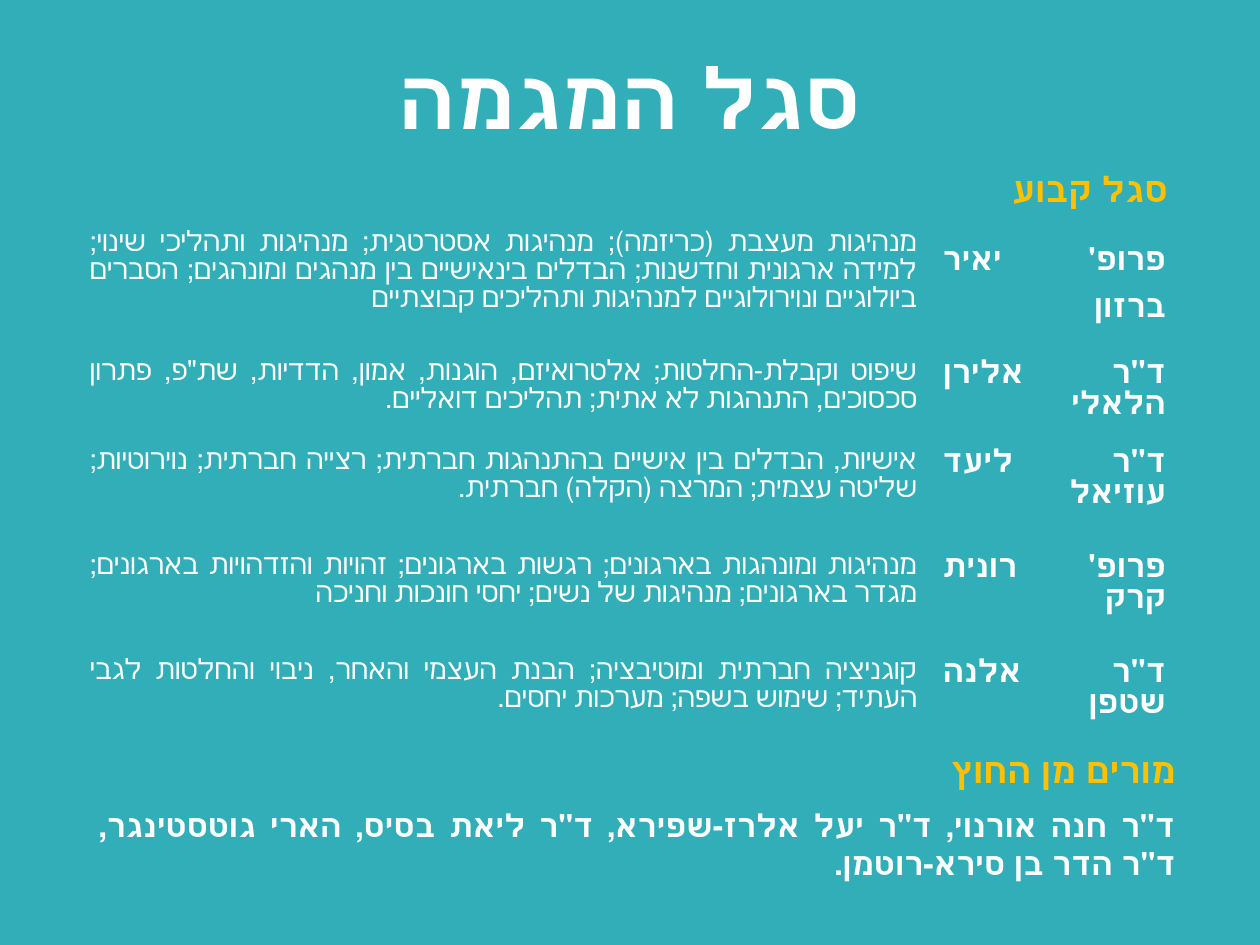
from pptx import Presentation
from pptx.dml.color import RGBColor
from pptx.enum import text
from pptx.oxml import ns
from pptx.util import Pt

COLORS = {"background": "32AEB8", "body": "FFFFFF", "heading": "FFC000"}
FONT = "Arial"
NO_STYLE = "{2D5ABB26-0587-4C30-8999-92F81FD0307C}"
COLUMN_WIDTHS = [487.5, 142]
ROW_HEIGHTS = [73.5, 51, 60, 60, 65]
NAME_SPACING = [1.5, None, None, None, None]
STAFF = [
    ("פרופ' יאיר ברזון",
     "מנהיגות מעצבת (כריזמה); מנהיגות אסטרטגית; מנהיגות ותהליכי שינוי; "
     "למידה ארגונית וחדשנות; הבדלים בינאישיים בין מנהגים ומונהגים; "
     "הסברים ביולוגיים ונוירולוגיים למנהיגות ותהליכים קבוצתיים"),
    ('ד"ר אלירן הלאלי',
     "שיפוט וקבלת-החלטות; אלטרואיזם, הוגנות, אמון, הדדיות, שת\"פ, פתרון "
     "סכסוכים, התנהגות לא אתית; תהליכים דואליים."),
    ('ד"ר ליעד עוזיאל',
     "אישיות, הבדלים בין אישיים בהתנהגות חברתית; רצייה חברתית; נוירוטיות; "
     "שליטה עצמית; המרצה (הקלה) חברתית."),
    ("פרופ' רונית קרק",
     "מנהיגות ומונהגות בארגונים; רגשות בארגונים; זהויות והזדהויות בארגונים; "
     "מגדר בארגונים; מנהיגות של נשים; יחסי חונכות וחניכה"),
    ('ד"ר אלנה שטפן',
     "קוגניציה חברתית ומוטיבציה; הבנת העצמי והאחר, ניבוי והחלטות לגבי "
     "העתיד; שימוש בשפה; מערכות יחסים."),
]
EXTERNAL_TEACHERS = ('ד"ר חנה אורנוי, ד"ר יעל אלרז-שפירא, ד"ר ליאת בסיס, '
                     'הארי גוטסטינגר, ד"ר הדר בן סירא-רוטמן.')


def write_hebrew(frame, words, size, align, color="body", bold=True, spacing=None):
    """Fill a text frame with one right-to-left paragraph."""
    paragraph = frame.paragraphs[0]
    paragraph.alignment = align
    paragraph.line_spacing = spacing
    paragraph._p.get_or_add_pPr().set("rtl", "1")
    run = paragraph.add_run()
    run.text = words
    run.font.size = Pt(size)
    run.font.bold = bold
    run.font.color.rgb = RGBColor.from_string(COLORS[color])
    run.font.name = FONT
    run._r.get_or_add_rPr().set("lang", "he-IL")


def add_text(slide, box, words, size, align, color="body", grow=True):
    frame = slide.shapes.add_textbox(*map(Pt, box)).text_frame
    frame.word_wrap = True
    if grow:
        frame.auto_size = text.MSO_AUTO_SIZE.SHAPE_TO_FIT_TEXT
    else:
        frame.vertical_anchor = text.MSO_ANCHOR.MIDDLE
    write_hebrew(frame, words, size, align, color)


def add_staff_table(slide):
    frame = slide.shapes.add_table(
        len(STAFF), 2, Pt(44), Pt(127.5), Pt(sum(COLUMN_WIDTHS)), Pt(sum(ROW_HEIGHTS)))
    table = frame.table
    table.first_row = table.horz_banding = False
    table._tbl.tblPr.find(ns.qn("a:tableStyleId")).text = NO_STYLE
    for column, width in zip(table.columns, COLUMN_WIDTHS):
        column.width = Pt(width)
    justify = text.PP_ALIGN.JUSTIFY
    for row, height, spacing, (name, topics) in zip(
            table.rows, ROW_HEIGHTS, NAME_SPACING, STAFF):
        row.height = Pt(height)
        topics_cell, name_cell = row.cells
        write_hebrew(topics_cell.text_frame, topics, 16, justify, bold=False)
        write_hebrew(name_cell.text_frame, name, 18, justify, spacing=spacing)
        for cell in row.cells:
            cell.fill.background()


def main():
    presentation = Presentation()
    presentation.slide_width, presentation.slide_height = Pt(720), Pt(540)
    slide = presentation.slides.add_slide(presentation.slide_layouts[6])
    fill = slide.background.fill
    fill.solid()
    fill.fore_color.rgb = RGBColor.from_string(COLORS["background"])

    align = text.PP_ALIGN
    add_staff_table(slide)
    add_text(slide, (462, 92, 212.5, 31.5), "סגל קבוע", 20, align.RIGHT, "heading")
    add_text(slide, (466.5, 424, 212.5, 31.5), "מורים מן החוץ", 20, align.RIGHT, "heading")
    add_text(slide, (49.5, 457, 629.5, 51), EXTERNAL_TEACHERS, 18, align.JUSTIFY)
    add_text(slide, (36, 21.5, 648, 67), "סגל המגמה", 48, align.CENTER, grow=False)
    presentation.save("out.pptx")


if __name__ == "__main__":
    main()
